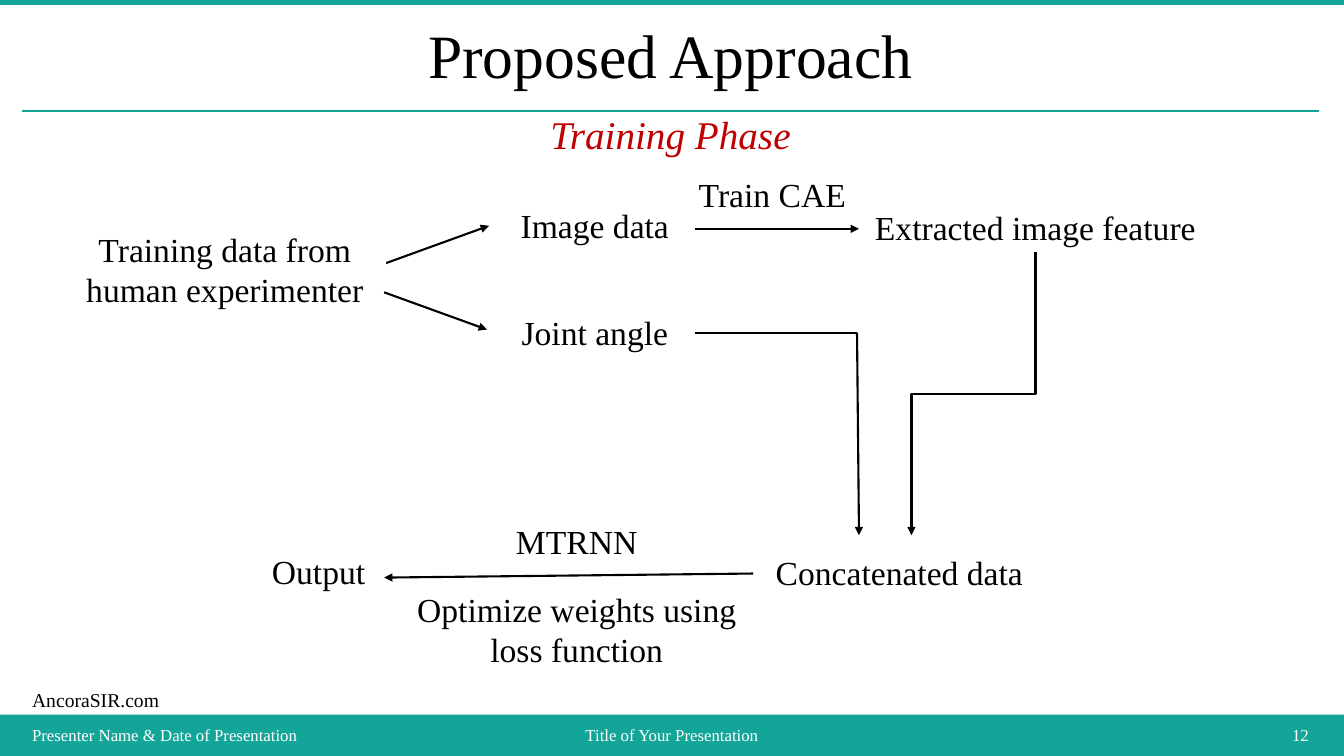
import pptx
import pptx.util
import pptx.dml.color
import pptx.enum.shapes
import pptx.enum.text
import pptx.oxml
import pptx.oxml.ns

Inches = pptx.util.Inches
Pt = pptx.util.Pt
ALIGN = pptx.enum.text.PP_ALIGN
KIND = pptx.enum.shapes.MSO_CONNECTOR
COLORS = {"teal": "14A599", "white": "FFFFFF", "black": "000000", "red": "C00000"}


def color(name):
    return pptx.dml.color.RGBColor.from_string(COLORS[name])


class Deck:
    font = "Times New Roman"

    def __init__(self):
        self.prs = pptx.Presentation()
        self.prs.slide_width = Inches(13.33)
        self.prs.slide_height = Inches(7.5)
        self.slide = self.prs.slides.add_slide(self.prs.slide_layouts[6])

    def back(self, fill):
        area = self.slide.background.fill
        area.solid()
        area.fore_color.rgb = color(fill)

    def rect(self, x, y, w, h, fill):
        kind = pptx.enum.shapes.MSO_SHAPE.RECTANGLE
        box = self.slide.shapes.add_shape(kind, Inches(x), Inches(y), Inches(w), Inches(h))
        box.shadow.inherit = False
        box.fill.solid()
        box.fill.fore_color.rgb = color(fill)
        box.line.fill.background()

    def text(self, words, x, y, w, h, size=24, ink="black", align=ALIGN.CENTER,
             middle=False, italic=False, wrap=True, space=None):
        box = self.slide.shapes.add_textbox(Inches(x), Inches(y), Inches(w), Inches(h))
        frame = box.text_frame
        frame.word_wrap = wrap
        if middle:
            frame.vertical_anchor = pptx.enum.text.MSO_ANCHOR.MIDDLE
        para = frame.paragraphs[0]
        para.alignment = align
        if space:
            para.line_spacing = space
        run = para.add_run()
        run.text = words
        run.font.name = self.font
        run.font.size = Pt(size)
        run.font.italic = italic
        run.font.color.rgb = color(ink)

    def line(self, x1, y1, x2, y2, ink="black", width=1.5, head=True,
             kind=KIND.STRAIGHT, turn=0):
        link = self.slide.shapes.add_connector(
            kind, Inches(x1), Inches(y1), Inches(x2), Inches(y2))
        link.line.color.rgb = color(ink)
        link.line.width = Pt(width)
        props = link._element.spPr
        if head:
            tail = pptx.oxml.parse_xml(
                "<a:tailEnd %s type='triangle'/>" % pptx.oxml.ns.nsdecls("a"))
            link.line._get_or_add_ln().append(tail)
        props.append(pptx.oxml.parse_xml(
            "<a:effectLst %s/>" % pptx.oxml.ns.nsdecls("a")))
        if turn:
            props.xfrm.set("rot", str(turn * 60000))

    def drop(self, x1, y1, x2, y2):
        # Elbow that leaves downward: a level one turned by a quarter
        mid_x, mid_y = (x1 + x2) / 2, (y1 + y2) / 2
        half_w, half_h = (y2 - y1) / 2, (x1 - x2) / 2
        self.line(mid_x - half_w, mid_y - half_h, mid_x + half_w, mid_y + half_h,
                  kind=KIND.ELBOW, turn=90)


def main():
    deck = Deck()

    # Frame and heading
    deck.back("teal")
    deck.rect(0, 0.05, 13.33, 7.04, "white")
    deck.text("AncoraSIR.com", 0.22, 6.78, 1.47, 0.34, 14, align=ALIGN.LEFT, wrap=False)
    deck.line(0.22, 1.1, 13.08, 1.1, "teal", 1, head=False)
    deck.text("Proposed Approach", 0.22, 0.08, 12.86, 1.01, 44, middle=True, space=0.9)
    deck.text("Training Phase", 0.22, 1.1, 12.86, 0.56, 28, "red", italic=True, space=0.9)

    # Footer
    for words, x, w, align in (
            ("Presenter Name & Date of Presentation", 0.22, 4.86, ALIGN.LEFT),
            ("Title of Your Presentation", 5.08, 3.17, ALIGN.CENTER),
            ("12", 8.25, 4.83, ALIGN.RIGHT)):
        deck.text(words, x, 7.09, w, 0.4, 12, "white", align, middle=True)

    # Steps and labels
    for words, x, y, h in (
            ("Training data from human experimenter", 0.48, 2.22, 0.91),
            ("Image data", 4.15, 1.98, 0.5),
            ("Joint angle", 4.15, 3.05, 0.5),
            ("Train CAE", 5.91, 1.68, 0.5),
            ("Extracted image feature", 8.52, 2, 0.5),
            ("Concatenated data", 7.17, 5.43, 0.5),
            ("MTRNN", 3.97, 5.12, 0.5),
            ("Optimize weights using loss function", 3.97, 5.79, 0.91),
            ("Output", 1.41, 5.42, 0.5)):
        deck.text(words, x, y, 3.5, h)

    # Arrows
    for ends in (
            (3.83, 2.61, 4.85, 2.24),
            (3.81, 2.9, 4.83, 3.27),
            (6.89, 2.27, 8.52, 2.27),
            (8.5, 3.3, 8.52, 5.31),
            (7.47, 5.69, 3.81, 5.73)):
        deck.line(*ends)
    deck.line(6.89, 3.3, 8.5, 3.3, head=False)
    deck.drop(10.27, 2.5, 9.04, 5.31)

    deck.prs.save("out.pptx")


if __name__ == "__main__":
    main()
